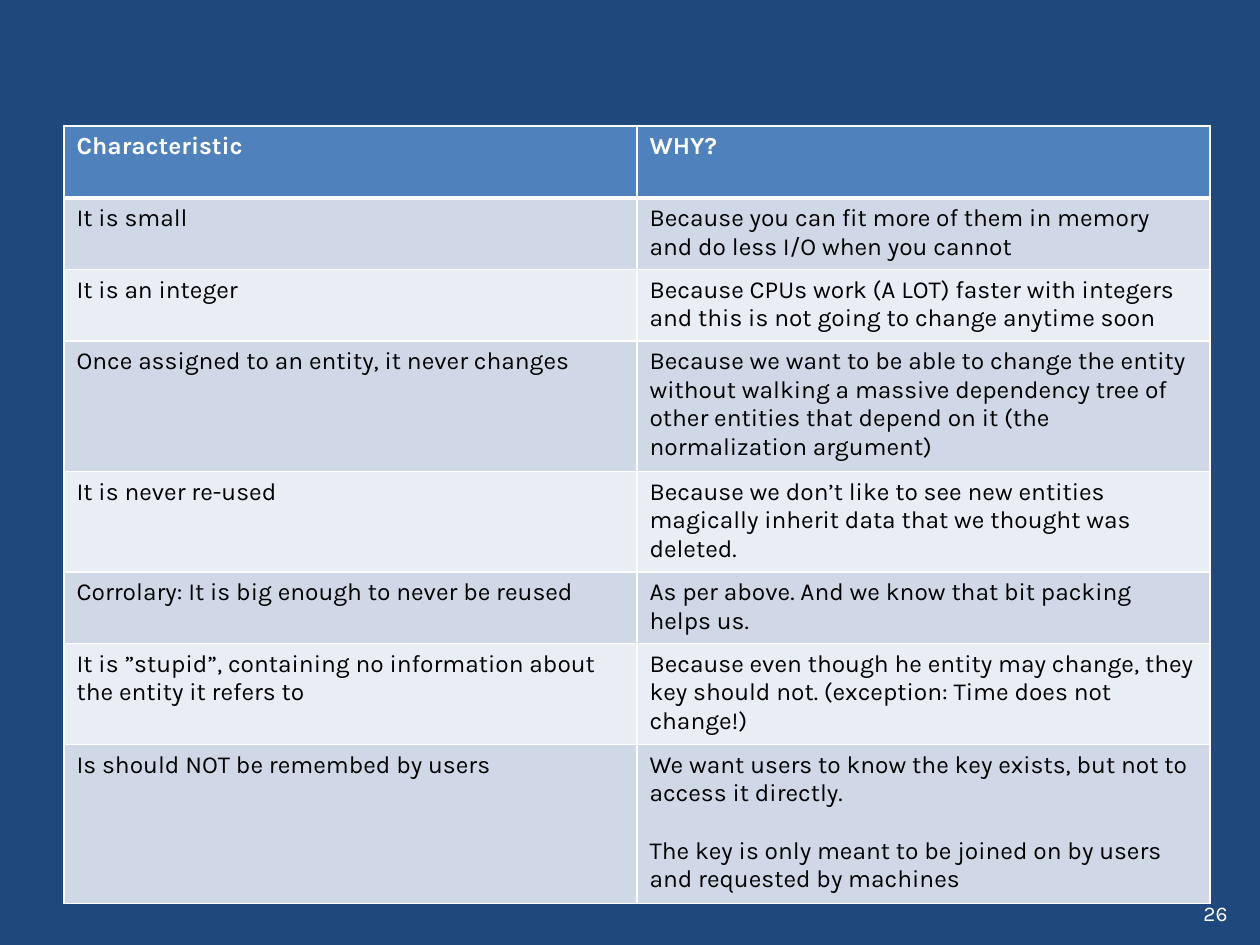
import pptx
import pptx.dml.color
import pptx.enum.text
import pptx.oxml
import pptx.oxml.ns
import pptx.util

EMU_PER_PX = 914400 / 126
FONT = "Karla"
COLORS = {
    "background": "1F497D",
    "header": "4F81BD",
    "odd_row": "D0D8E8",
    "even_row": "E9EDF4",
    "white": "FFFFFF",
    "black": "000000",
}
ROWS = [
    ("Characteristic", "WHY?"),
    ("It is small",
     "Because you can fit more of them in memory and do less I/O when you cannot"),
    ("It is an integer",
     "Because CPUs work (A LOT) faster with integers and this is not going to change anytime soon"),
    ("Once assigned to an entity, it never changes",
     "Because we want to be able to change the entity without walking a massive dependency tree of "
     "other entities that depend on it (the normalization argument)"),
    ("It is never re-used",
     "Because we don’t like to see new entities magically inherit data that we thought was deleted."),
    ("Corrolary: It is big enough to never be reused",
     "As per above. And we know that bit packing helps us."),
    ("It is ”stupid”, containing no information about the entity it refers to",
     "Because even though he entity may change, they key should not. "
     "(exception: Time does not change!)"),
    ("Is should NOT be remembed by users",
     "We want users to know the key exists, but not to access it directly.\n"
     "The key is only meant to be joined on by users and requested by machines"),
]
ROW_HEIGHTS = [72, 70, 70, 126, 99, 70, 98, 156]


def px(length):
    return pptx.util.Emu(round(length * EMU_PER_PX))


def rgb(name):
    return pptx.dml.color.RGBColor.from_string(COLORS[name])


def write_text(frame, text, size=14, color="black", bold=False, align="LEFT", gap=16.4):
    frame.word_wrap = True
    frame.text = text
    for index, paragraph in enumerate(frame.paragraphs):
        paragraph.alignment = getattr(pptx.enum.text.PP_ALIGN, align)
        if index:
            paragraph.space_before = pptx.util.Pt(gap)
        for run in paragraph.runs:
            run.font.name = FONT
            run.font.size = pptx.util.Pt(size)
            run.font.bold = bold
            run.font.color.rgb = rgb(color)


class SlideBuilder:
    """Holds the style and the current slide, and adds its elements."""

    def __init__(self, presentation):
        self.slide = presentation.slides.add_slide(presentation.slide_layouts[6])
        self.slide.background.fill.solid()
        self.slide.background.fill.fore_color.rgb = rgb("background")

    def text(self, left, top, width, height, text, **style):
        shape = self.slide.shapes.add_textbox(px(left), px(top), px(width), px(height))
        shape.text_frame.vertical_anchor = pptx.enum.text.MSO_ANCHOR.MIDDLE
        write_text(shape.text_frame, text, **style)

    def borders(self, cell, top, bottom):
        properties = cell._tc.get_or_add_tcPr()
        widths = {"lnL": 1, "lnR": 1, "lnT": top, "lnB": bottom}
        for index, (side, width) in enumerate(widths.items()):
            line = pptx.oxml.parse_xml(
                f'<a:{side} {pptx.oxml.ns.nsdecls("a")} w="{pptx.util.Pt(width)}">'
                f'<a:solidFill><a:srgbClr val="{COLORS["white"]}"/></a:solidFill></a:{side}>')
            properties.insert(index, line)

    def table(self, left, top, column_width, heights, rows):
        columns = len(rows[0])
        table = self.slide.shapes.add_table(
            len(rows), columns, px(left), px(top),
            px(column_width * columns), px(sum(heights))).table
        for column in table.columns:
            column.width = px(column_width)
        for row_index, texts in enumerate(rows):
            table.rows[row_index].height = px(heights[row_index])
            header = row_index == 0
            fill = "header" if header else "odd_row" if row_index % 2 else "even_row"
            for column_index, text in enumerate(texts):
                cell = table.cell(row_index, column_index)
                cell.fill.solid()
                cell.fill.fore_color.rgb = rgb(fill)
                self.borders(cell, 3 if row_index == 1 else 1, 3 if header else 1)
                write_text(cell.text_frame, text, bold=header,
                           color="white" if header else "black")


def main():
    presentation = pptx.Presentation()
    presentation.slide_width = px(1260)
    presentation.slide_height = px(945)
    builder = SlideBuilder(presentation)
    builder.text(837, 882, 403, 63, "26", size=12, color="white", align="RIGHT")
    builder.table(64, 126, 573, ROW_HEIGHTS, ROWS)
    presentation.save("out.pptx")


if __name__ == "__main__":
    main()
